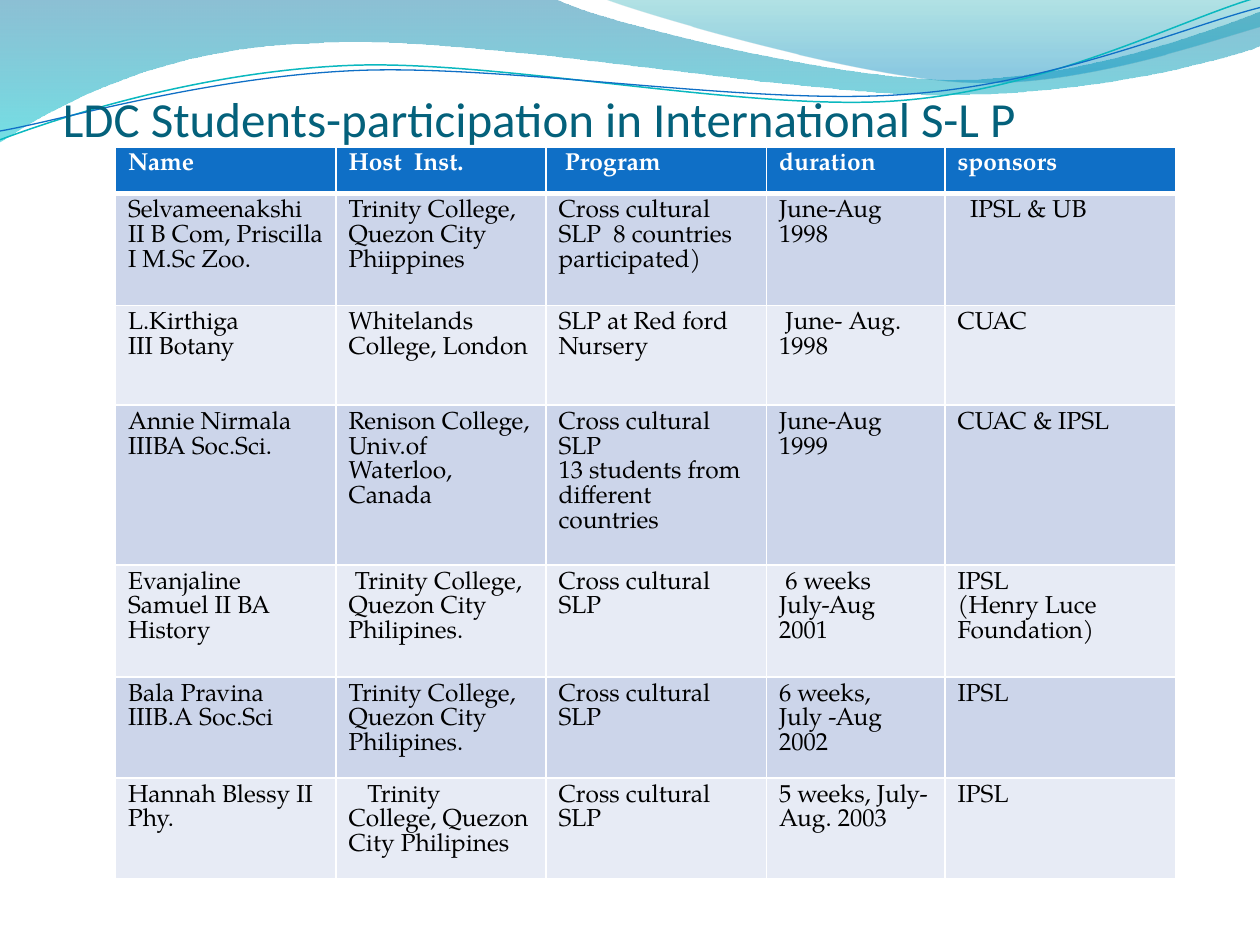
"""Build a slide with a wave header and a table of students in international programs."""
from dataclasses import dataclass

from lxml.etree import SubElement
from pptx import Presentation
from pptx.dml.color import RGBColor
from pptx.enum.text import MSO_ANCHOR
from pptx.oxml.ns import qn
from pptx.util import Inches, Pt


@dataclass(frozen=True)
class Theme:
    title: str = "04617B"
    header: str = "0F6FC6"
    bands: tuple = ("CCD5EA", "E7EBF5")
    white: str = "FFFFFF"
    black: str = "000000"
    teal: str = "0AB8BF"
    title_font: str = "Calibri"
    body_font: str = "TeX Gyre Pagella"
    title_size: int = 28
    body_size: int = 14


theme = Theme()


def write(frame, text, font=theme.body_font, size=theme.body_size, color=theme.black, bold=False):
    frame.word_wrap = True
    for index, line in enumerate(text.split("\n")):
        para = frame.paragraphs[0] if index == 0 else frame.add_paragraph()
        words = line.lstrip()
        if words != line:
            properties = para._p.get_or_add_pPr()
            properties.set("marL", "0")
            properties.set("indent", str(Inches(0.05 * (len(line) - len(words)))))
        span = para.add_run()
        span.text = words
        span.font.name = font
        span.font.size = Pt(size)
        span.font.bold = bold
        span.font.color.rgb = RGBColor.from_string(color)


def draw_wave(shapes, start, pieces, closed):
    points = [piece[i:i + 2] for piece in pieces for i in range(0, len(piece), 2)]
    builder = shapes.build_freeform(Inches(start[0]), Inches(start[1]))
    builder.add_line_segments([(Inches(x), Inches(y)) for x, y in points], close=closed)
    wave = builder.convert_to_shape()
    wave.shadow.inherit = False
    segments = iter(list(wave._element.iter(qn("a:lnTo"))))
    for piece in pieces:
        first = next(segments)
        if len(piece) == 6:
            curve = first.makeelement(qn("a:cubicBezTo"))
            first.addprevious(curve)
            for segment in (first, next(segments), next(segments)):
                curve.append(segment[0])
                segment.getparent().remove(segment)
    return wave


deck = Presentation()
deck.slide_width, deck.slide_height = Inches(10), Inches(7.5)
page = deck.slides.add_slide(deck.slide_layouts[6])

filled_waves = [
    ((0, 0), [(4.4, -0.01), (4.76, 0.17, 6.64, 0.63, 7.58, 0.63), (8.53, 0.63, 9.58, 0.26, 10, 0.09),
              (10.01, 0.36), (9.83, 0.44, 8.7, 0.76, 7.46, 0.75), (6.22, 0.75, 3.82, 0.28, 2.57, 0.34),
              (1.29, 0.36, 0.46, 0.83, -0.01, 1.13)],
     [(0, "0074A1", 45), (1, "00C6CF", 55)]),
    ((4.79, -0.01), [(5.09, 0.11, 6.82, 0.62, 7.69, 0.65), (8.56, 0.69, 9.61, 0.32, 10, 0.21), (10, 0)],
     [(0, "00A1A9", 30), (0.8, "008BBF", 45)]),
]
for start, pieces, stops in filled_waves:
    wave = draw_wave(page.shapes, start, pieces, True)
    wave.line.fill.background()
    wave.fill.gradient()
    wave.fill.gradient_angle = 270
    for stop, (position, color, _) in zip(wave.fill.gradient_stops, stops):
        stop.position = position
        stop.color.rgb = RGBColor.from_string(color)
    for tint, (_, _, opacity) in zip(wave._element.spPr.iter(qn("a:srgbClr")), stops):
        SubElement(tint, qn("a:alpha"), val=str(opacity * 1000))

line_waves = [
    ((0, 1.11), [(0.48, 0.93, 1.58, 0.57, 2.77, 0.52), (3.95, 0.47, 5.93, 0.89, 7.13, 0.8),
                 (8.33, 0.71, 9.38, 0.15, 9.98, -0.02)], theme.teal, 0.85),
    ((0, 1.04), [(0.47, 0.96, 1.64, 0.61, 2.83, 0.56), (4.03, 0.51, 5.97, 0.84, 7.17, 0.75),
                 (8.36, 0.67, 9.41, 0.21, 10, 0.06)], theme.header, 0.75),
]
for start, pieces, color, width in line_waves:
    wave = draw_wave(page.shapes, start, pieces, False)
    wave.fill.background()
    wave.line.color.rgb = RGBColor.from_string(color)
    wave.line.width = Pt(width)

title_box = page.shapes.add_textbox(Inches(0.5), Inches(0), Inches(9), Inches(1.17))
title = title_box.text_frame
title.vertical_anchor = MSO_ANCHOR.BOTTOM
title.margin_left = title.margin_right = title.margin_bottom = 0
write(title, "LDC Students-participation in International S-L P",
      font=theme.title_font, size=theme.title_size, color=theme.title)

records = [
    ("Name", "Host  Inst.", " Program", "duration", "sponsors"),
    ("Selvameenakshi II B Com, Priscilla I M.Sc Zoo.", "Trinity College, Quezon City\nPhiippines",
     "Cross cultural SLP  8 countries participated)", "June-Aug 1998", "  IPSL & UB"),
    ("L.Kirthiga\nIII Botany", "Whitelands College, London", "SLP at Red ford Nursery",
     " June- Aug. 1998", "CUAC"),
    ("Annie Nirmala\nIIIBA Soc.Sci.", "Renison College, Univ.of Waterloo, Canada",
     "Cross cultural SLP\n13 students from different countries", "June-Aug 1999", "CUAC & IPSL"),
    ("Evanjaline Samuel II BA History", " Trinity College, Quezon City Philipines.",
     "Cross cultural SLP", " 6 weeks\nJuly-Aug\n2001", "IPSL\n(Henry Luce Foundation)"),
    ("Bala Pravina\nIIIB.A Soc.Sci", "Trinity College, Quezon City Philipines.",
     "Cross cultural SLP", "6 weeks,\nJuly -Aug\n2002", "IPSL"),
    ("Hannah Blessy II Phy.", "   Trinity College, Quezon City Philipines",
     "Cross cultural SLP", "5 weeks, July-Aug. 2003", "IPSL"),
]
unit = Inches(1) // 12
widths = [21, 20, 21, 17, 22]
heights = [0.37, 0.89, 0.79, 0.69, 0.89, 0.78, 0.79]
table_frame = page.shapes.add_table(len(heights), len(widths), 11 * unit, 14 * unit,
                                    sum(widths) * unit, Inches(5.96))
table = table_frame.table
for column, width in zip(table.columns, widths):
    column.width = width * unit
for row, height in zip(table.rows, heights):
    row.height = Inches(height)
table_frame.height = Inches(5.96)

for row_index, record in enumerate(records):
    is_header = row_index == 0
    for column_index, text in enumerate(record):
        cell = table.cell(row_index, column_index)
        write(cell.text_frame, text, color=theme.white if is_header else theme.black, bold=is_header)
        properties = cell._tc.get_or_add_tcPr()
        for side in ("lnL", "lnR", "lnT", "lnB"):
            thick = (is_header and side == "lnB") or (row_index == 1 and side == "lnT")
            border = SubElement(properties, qn(f"a:{side}"), w=str(Pt(3 if thick else 1)))
            SubElement(SubElement(border, qn("a:solidFill")), qn("a:srgbClr"), val=theme.white)
        cell.fill.solid()
        cell.fill.fore_color.rgb = RGBColor.from_string(
            theme.header if is_header else theme.bands[(row_index - 1) % 2])

deck.save("out.pptx")
